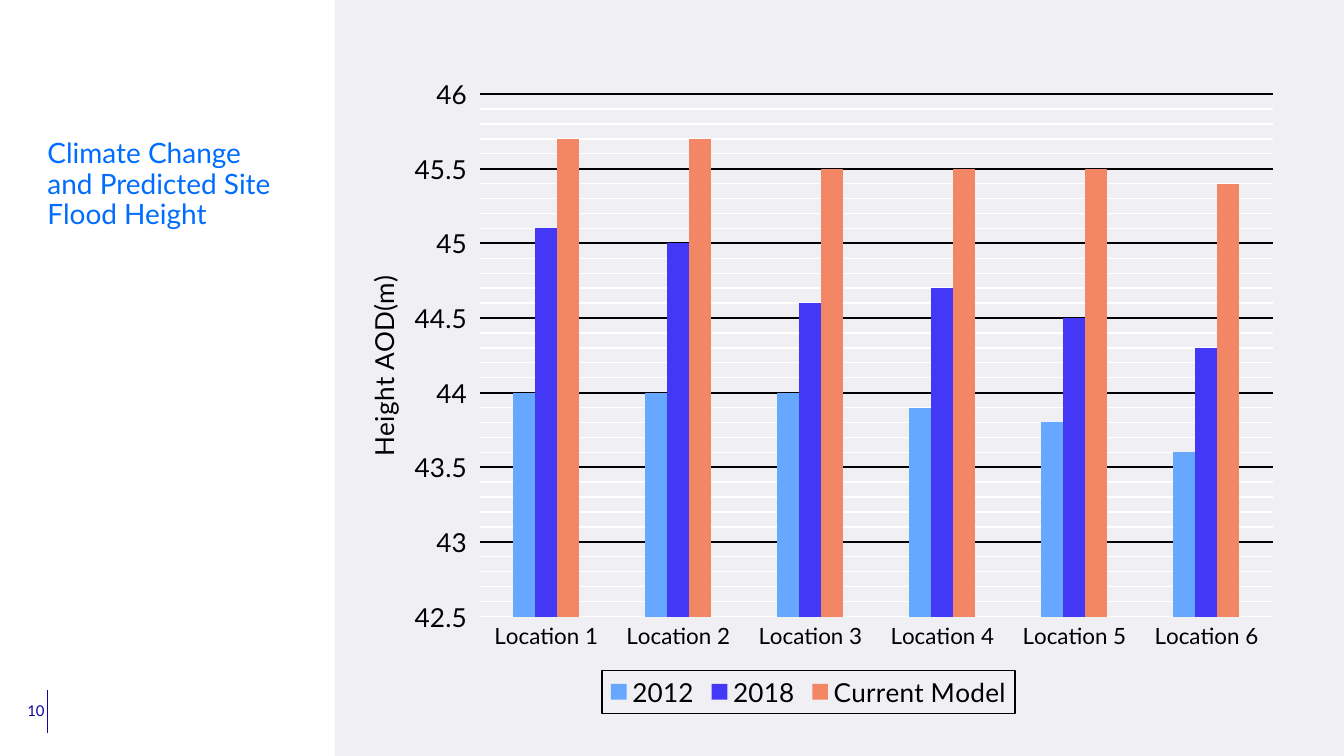
from dataclasses import dataclass

from lxml import etree
from pptx import Presentation
from pptx import util as u
from pptx.chart import data
from pptx.dml import color
from pptx.enum import chart as ch, shapes, text
from pptx.oxml import parse_xml
from pptx.oxml.ns import nsdecls, qn

WIDE, HIGH = 1344, 756
SCALE = u.Inches(10) / WIDE
FACE = "Lato"
BLACK, WHITE, NAVY = "000000", "FFFFFF", "10069F"


@dataclass(frozen=True)
class Box:
    left: int
    top: int
    wide: int
    high: int

    def emu(self) -> list[int]:
        return [px(n) for n in (self.left, self.top, self.wide, self.high)]


@dataclass(frozen=True)
class Run:
    name: str
    fill: str
    vals: tuple[float, ...]


FRAME = Box(325, 65, 965, 649)
PLOT = Box(480, 94, 792, 523)
KEY = Box(602, 671, 413, 44)
LABEL = Box(360, 271, 26, 182)
CATS = [f"Location {n}" for n in range(1, 7)]
RUNS = [
    Run("2012", "66A7FF", (44, 44, 44, 43.9, 43.8, 43.6)),
    Run("2018", "4438F7", (45.1, 45, 44.6, 44.7, 44.5, 44.3)),
    Run("Current Model", "F38665", (45.7, 45.7, 45.5, 45.5, 45.5, 45.4)),
]


def px(n: int) -> int:
    return round(n * SCALE)


def rgb(code: str) -> color.RGBColor:
    return color.RGBColor.from_string(code)


def style(font, size: float, code: str) -> None:
    font.name, font.size, font.bold = FACE, u.Pt(size), False
    font.color.rgb = rgb(code)


def stroke(line, code: str, width: float) -> None:
    line.color.rgb = rgb(code)
    line.width = u.Pt(width)


def edge(code: str, width: float):
    return parse_xml(
        f'<c:spPr {nsdecls("c", "a")}><a:noFill/><a:ln w="{u.Pt(width)}">'
        f'<a:solidFill><a:srgbClr val="{code}"/></a:solidFill></a:ln></c:spPr>'
    )


def place(part, spot: int, box: Box, inner: bool = False, sized: bool = True) -> None:
    for old in part.findall(qn("c:layout")):
        part.remove(old)
    vals = {"xMode": "edge", "yMode": "edge"}
    vals["x"] = round((box.left - FRAME.left) / FRAME.wide, 3)
    vals["y"] = round((box.top - FRAME.top) / FRAME.high, 3)
    if sized:
        vals["w"] = round(box.wide / FRAME.wide, 3)
        vals["h"] = round(box.high / FRAME.high, 3)
    if inner:
        vals = {"layoutTarget": "inner", **vals}
    lay = parse_xml(f"<c:layout {nsdecls('c')}/>")
    man = etree.SubElement(lay, qn("c:manualLayout"))
    for tag, val in vals.items():
        etree.SubElement(man, qn(f"c:{tag}")).set("val", str(val))
    part.insert(spot, lay)


def write(shape, words: str, size: float, code: str, align) -> None:
    frame = shape.text_frame
    frame.word_wrap = True
    frame.auto_size = text.MSO_AUTO_SIZE.NONE
    frame.vertical_anchor = text.MSO_ANCHOR.TOP
    frame.text = words
    para = frame.paragraphs[0]
    para.alignment = align
    style(para.runs[0].font, size, code)


def panel(slide) -> None:
    back = slide.shapes.add_shape(
        shapes.MSO_SHAPE.RECTANGLE, *Box(335, 0, WIDE - 335, HIGH).emu()
    )
    back.shadow.inherit = False
    back.fill.solid()
    back.fill.fore_color.rgb = rgb("EFEFF4")
    back.line.fill.background()


def footer(slide) -> None:
    rule = slide.shapes.add_connector(
        shapes.MSO_CONNECTOR.STRAIGHT, px(47), px(690), px(47), px(733)
    )
    stroke(rule.line, NAVY, 0.5)
    etree.SubElement(rule._element.spPr, qn("a:effectLst"))
    page = slide.shapes.add_textbox(*Box(7, 695, 51, 32).emu())
    write(page, "10", 8, NAVY, text.PP_ALIGN.RIGHT)


def heading(slide) -> None:
    head = slide.shapes.title
    head.left, head.top, head.width, head.height = Box(34, 133, 262, 141).emu()
    words = "Climate Change and Predicted Site Flood Height"
    write(head, words, 15, "006DFF", text.PP_ALIGN.LEFT)
    head.text_frame.paragraphs[0].line_spacing = 0.9


def axes(chart) -> None:
    cat, val = chart.category_axis, chart.value_axis
    cat.major_tick_mark = ch.XL_TICK_MARK.NONE
    style(cat.tick_labels.font, 12, BLACK)
    stroke(cat.format.line, WHITE, 0.75)
    val.minimum_scale, val.maximum_scale = 42.5, 46
    val.major_unit, val.minor_unit = 0.5, 0.1
    val.has_major_gridlines = val.has_minor_gridlines = True
    stroke(val.major_gridlines.format.line, BLACK, 1)
    val._element.find(qn("c:minorGridlines")).append(edge(WHITE, 0.75))
    val.format.line.fill.background()
    style(val.tick_labels.font, 14, BLACK)
    name = val.axis_title
    name.text_frame.text = "Height AOD(m)"
    style(name.text_frame.paragraphs[0].runs[0].font, 14, BLACK)
    place(name._element, 1, LABEL, sized=False)


def legend(chart) -> None:
    chart.has_legend = True
    key = chart.legend
    key.position = ch.XL_LEGEND_POSITION.BOTTOM
    key.include_in_layout = False
    style(key.font, 14, BLACK)
    part = key._element
    place(part, 1, KEY)
    part.find(qn("c:txPr")).addprevious(edge(BLACK, 0.75))


def graph(slide) -> None:
    table = data.CategoryChartData()
    table.categories = CATS
    for run in RUNS:
        table.add_series(run.name, run.vals)
    kind = ch.XL_CHART_TYPE.COLUMN_CLUSTERED
    chart = slide.shapes.add_chart(kind, *FRAME.emu(), table).chart
    chart.has_title = False
    style(chart.font, 10, BLACK)
    plot = chart.plots[0]
    plot.gap_width, plot.overlap = 300, 0
    plot.vary_by_categories = False
    for bar, run in zip(plot.series, RUNS):
        bar.format.fill.solid()
        bar.format.fill.fore_color.rgb = rgb(run.fill)
        bar.invert_if_negative = False
    axes(chart)
    legend(chart)
    place(chart._chartSpace.chart.plotArea, 0, PLOT, inner=True)


def main() -> None:
    deck = Presentation()
    deck.slide_width, deck.slide_height = px(WIDE), px(HIGH)
    slide = deck.slides.add_slide(deck.slide_layouts[5])
    panel(slide)
    footer(slide)
    heading(slide)
    graph(slide)
    deck.save("out.pptx")


if __name__ == "__main__":
    main()
